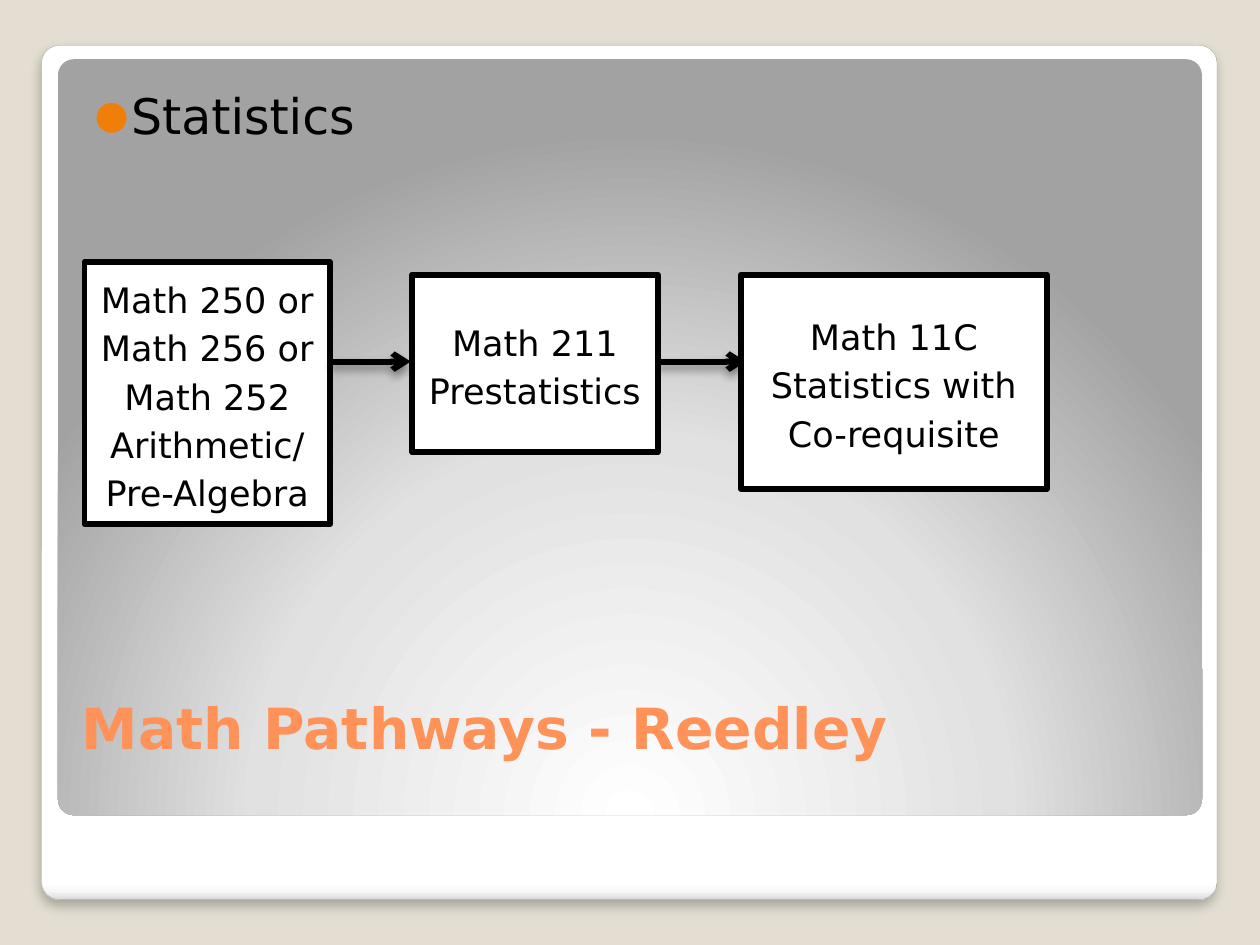
from lxml.etree import SubElement
from pptx import Presentation
from pptx.dml.color import RGBColor
from pptx.enum.shapes import MSO_CONNECTOR as Connector, MSO_SHAPE as Shape
from pptx.enum.text import MSO_ANCHOR as Anchor, PP_ALIGN as Align
from pptx.oxml import parse_xml
from pptx.oxml.ns import nsdecls, qn
from pptx.util import Inches, Pt

FONT = "DejaVu Sans"
BLACK, WHITE = "000000", "FFFFFF"
LINE_WIDTH = 3.35
ARROW_Y = 2.87


def color(value):
    return RGBColor.from_string(value)


def place(left, top, width, height):
    return [Inches(length) for length in (left, top, width, height)]


def write(shape, text, size=20, ink=BLACK, bold=False, align=Align.LEFT, anchor=Anchor.TOP):
    """Put one formatted paragraph in a shape and return it."""
    frame = shape.text_frame
    frame.word_wrap = True
    frame.vertical_anchor = anchor
    para = frame.paragraphs[0]
    para.alignment = align
    span = para.add_run()
    span.text = text
    font = span.font
    font.name, font.size, font.bold = FONT, Pt(size), bold
    font.color.rgb = color(ink)
    return para


def add_shadow(shape, alpha, blur, distance):
    """Give a shape a black shadow that falls straight down."""
    properties = shape._element.spPr
    effects = properties.find(qn("a:effectLst"))
    if effects is None:
        effects = SubElement(properties, qn("a:effectLst"))
    shadow = SubElement(effects, qn("a:outerShdw"), blurRad=str(Pt(blur)),
                        dist=str(Pt(distance)), dir="5400000", algn="tl", rotWithShape="0")
    ink = SubElement(shadow, qn("a:srgbClr"), val=BLACK)
    SubElement(ink, qn("a:alpha"), val=str(alpha * 1000))


def add_panel(slide, position, stops, direction):
    """Add a rounded background panel with a gradient fill."""
    panel = slide.shapes.add_shape(Shape.ROUNDED_RECTANGLE, *place(*position))
    panel.adjustments[0] = 0.021
    panel.shadow.inherit = False
    panel.line.fill.background()
    panel.fill.background()
    marks = "".join(f'<a:gs pos="{stop * 1000}"><a:srgbClr val="{ink}"/></a:gs>'
                    for stop, ink in stops)
    gradient = parse_xml(f'<a:gradFill {nsdecls("a")} rotWithShape="1">'
                         f'<a:gsLst>{marks}</a:gsLst>{direction}</a:gradFill>')
    properties = panel._element.spPr
    properties.replace(properties.find(qn("a:noFill")), gradient)
    return panel


def add_course(slide, position, text, kind=Shape.RECTANGLE):
    box = slide.shapes.add_shape(kind, *place(*position))
    box.shadow.inherit = False
    box.fill.solid()
    box.fill.fore_color.rgb = color(WHITE)
    box.line.color.rgb = color(BLACK)
    box.line.width = Pt(LINE_WIDTH)
    para = write(box, text, align=Align.CENTER, anchor=Anchor.MIDDLE)
    para.line_spacing = 1.15
    para.space_after = Pt(10)


def add_arrow(slide, start, end):
    arrow = slide.shapes.add_connector(Connector.STRAIGHT, Inches(start), Inches(ARROW_Y),
                                       Inches(end), Inches(ARROW_Y))
    arrow.line.color.rgb = color(BLACK)
    arrow.line.width = Pt(LINE_WIDTH)
    SubElement(arrow.line._get_or_add_ln(), qn("a:tailEnd"), type="arrow")
    add_shadow(arrow, alpha=40, blur=5.2, distance=3)


def add_topic(slide, position, text):
    """Add the bulleted topic line."""
    box = slide.shapes.add_textbox(*place(*position))
    frame = box.text_frame
    frame.margin_left, frame.margin_top = Inches(0.2), Inches(0.1)
    para = write(box, text, size=28)
    para.space_before = Pt(2.5)
    settings = para._p.get_or_add_pPr()
    settings.set("marL", str(Inches(0.29)))
    settings.set("indent", str(Inches(-0.29)))
    bullet_color = SubElement(settings, qn("a:buClr"))
    SubElement(bullet_color, qn("a:srgbClr"), val="F07F09")
    SubElement(settings, qn("a:buSzPct"), val="80000")
    SubElement(settings, qn("a:buFont"), typeface=FONT)
    SubElement(settings, qn("a:buChar"), char="●")


def add_title(slide, position, text):
    title = slide.shapes.title
    title.left, title.top, title.width, title.height = place(*position)
    write(title, text, size=32.4, ink="FF9258", bold=True)
    # Bring the title in front of the panels
    slide.shapes._spTree.append(title._element)


def main():
    deck = Presentation()
    deck.slide_width, deck.slide_height = Inches(10), Inches(7.5)
    slide = deck.slides.add_slide(deck.slide_layouts[5])
    slide.background.fill.solid()
    slide.background.fill.fore_color.rgb = color("E3DED1")

    # Background panels
    card = add_panel(slide, (0.33, 0.36, 9.33, 6.78),
                     [(0, WHITE), (98, WHITE), (99, "F7F7F7"), (100, "DADADA")],
                     '<a:lin ang="5400000" scaled="0"/>')
    card.line.color.rgb = color("A4A4A4")
    card.line.width = Pt(0.16)
    add_shadow(card, alpha=25, blur=6, distance=4)
    add_panel(slide, (0.46, 0.47, 9.08, 6), [(0, WHITE), (55, "E1E1E1"), (100, "A2A2A2")],
              '<a:path path="circle">'
              '<a:fillToRect l="50000" t="175000" r="50000" b="-75000"/></a:path>')

    # Title and topic
    add_title(slide, (0.55, 5.45, 8.95, 1.15), "Math Pathways - Reedley")
    add_topic(slide, (0.55, 0.58, 8.95, 4.58), "Statistics")

    # Course pathway
    add_course(slide, (0.67, 2.08, 1.95, 2.08),
               "Math 250 or Math 256 or Math 252 Arithmetic/ Pre-Algebra",
               kind=Shape.FLOWCHART_PROCESS)
    add_arrow(slide, 5.22, 5.92)
    add_course(slide, (3.27, 2.18, 1.95, 1.41), "Math 211 Prestatistics")
    add_arrow(slide, 2.62, 3.26)
    add_course(slide, (5.88, 2.18, 2.43, 1.7), "Math 11C Statistics with Co-requisite")

    deck.save("out.pptx")


if __name__ == "__main__":
    main()
